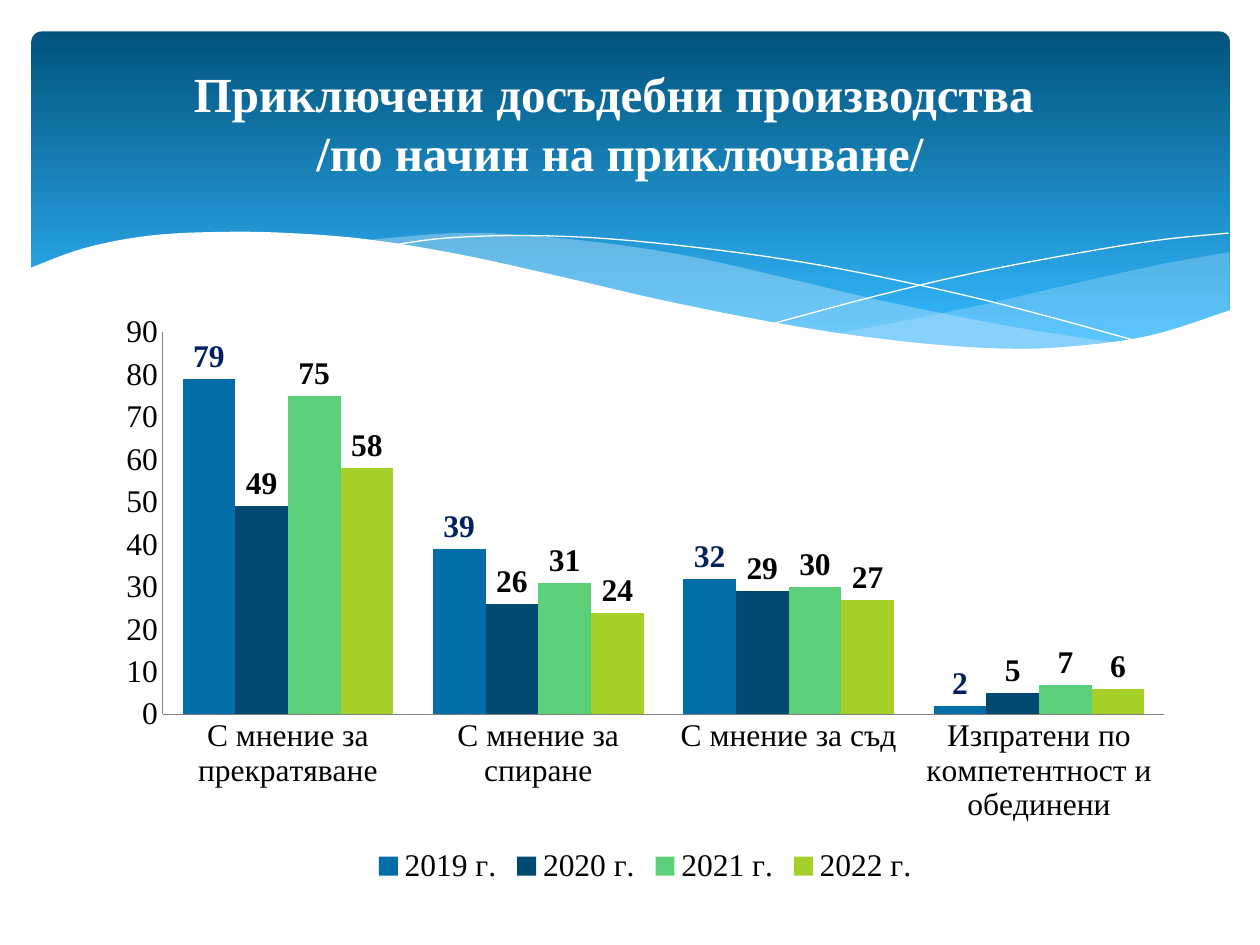
from lxml import etree
from pptx import Presentation
from pptx.chart.data import CategoryChartData
from pptx.dml.color import RGBColor
from pptx.enum.chart import XL_CHART_TYPE, XL_LABEL_POSITION, XL_LEGEND_POSITION, XL_TICK_MARK
from pptx.enum.shapes import MSO_SHAPE
from pptx.enum.text import MSO_ANCHOR, PP_ALIGN
from pptx.oxml.ns import qn
from pptx.util import Pt

COLUMNS = XL_CHART_TYPE.COLUMN_CLUSTERED
OUTSIDE = XL_LABEL_POSITION.OUTSIDE_END
BOTTOM = XL_LEGEND_POSITION.BOTTOM
NO_TICK = XL_TICK_MARK.NONE
ROUNDED = MSO_SHAPE.ROUNDED_RECTANGLE
MIDDLE = MSO_ANCHOR.MIDDLE
CENTER = PP_ALIGN.CENTER

FONT = "Times New Roman"
COLORS = {
    "white": "FFFFFF", "black": "000000", "navy": "002060", "axis": "808080",
    "top": "01537D", "base": "33B8FE", "swell": "C6E7FC",
}

# Wave outlines in points, measured from the banner's top left corner
RIGHT_TOP = [(684.7, 126), (645, 133.2), (602, 142.6), (543, 156.2), (490.3, 167), (458, 172.8)]
RIGHT_LOW = [(458, 172.8), (499.7, 177.8), (544.3, 181.2), (583.2, 181.4), (622, 177.8),
             (655.2, 170.6), (684.7, 159.8)]
MID_TOP = [(625, 178.6), (563, 169.2), (490.3, 154.8), (435, 141.8), (381.6, 129.6),
           (334, 121.7), (284.4, 116.6), (242, 115.2), (188, 119.5)]
MID_LOW = [(188, 119.5), (242.6, 128.2), (305.3, 141.8), (363.6, 154.8), (414.7, 165.6),
           (471.6, 175), (520.6, 180.7), (563, 182.2), (625, 178.6)]
FALLING = [(204.5, 122.4), (236.2, 118.1), (281.5, 116.6), (334, 118.8), (401, 126),
           (460.8, 135.4), (529.2, 149.8), (580.3, 162.7), (635, 177.8)]
RISING = [(423.4, 167), (482.4, 151.2), (540.7, 137.5), (605.5, 125.3), (647.3, 118.8),
          (684, 115.2)]
FRONT = [(685.4, 159.1), (637.2, 174.2), (584.6, 180.7), (542.2, 180.7), (491.8, 176.4),
         (432.7, 167.8), (363, 154.1), (303.8, 140.4), (244.8, 127.4), (192.2, 118.8),
         (147.6, 115.2), (109.4, 114.5), (67.7, 116.6), (30.2, 123.8), (-1.4, 135.4)]
FLOOR = [(-1.4, 219), (685.4, 219)]

YEARS = [
    ("2019 г.", (79, 39, 32, 2), "016EA7", "navy"),
    ("2020 г.", (49, 26, 29, 5), "004970", "black"),
    ("2021 г.", (75, 31, 30, 7), "5BD078", "black"),
    ("2022 г.", (58, 24, 27, 6), "A5D028", "black"),
]
GROUPS = ["С мнение за прекратяване", "С мнение за спиране", "С мнение за съд",
          "Изпратени по компетентност и обединени"]


def rgb(name):
    return RGBColor.from_string(COLORS.get(name, name))


def style(font, size, color, bold=False):
    font.name, font.size, font.bold = FONT, Pt(size), bold
    font.color.rgb = rgb(color)


def smooth(knots, steps=6):
    """Sample a Catmull-Rom curve through the knots."""
    ends = [knots[0], *knots, knots[-1]]
    curve = [knots[0]]
    for a, b, c, d in zip(ends, ends[1:], ends[2:], ends[3:]):
        for step in range(1, steps + 1):
            t = step / steps
            curve.append(tuple(
                (2 * q + (r - p) * t + (2 * p - 5 * q + 4 * r - s) * t ** 2
                 + (3 * q - p - 3 * r + s) * t ** 3) / 2
                for p, q, r, s in zip(a, b, c, d)))
    return curve


def trace(slide, box, points, closed):
    spots = [(Pt(box[0] + x), Pt(box[1] + y)) for x, y in points]
    pen = slide.shapes.build_freeform(*spots[0])
    pen.add_line_segments(spots[1:], close=closed)
    shape = pen.convert_to_shape()
    shape.shadow.inherit = False
    return shape


def add_wave(slide, box, points, color, alpha=100):
    wave = trace(slide, box, points, True)
    wave.fill.solid()
    wave.fill.fore_color.rgb = rgb(color)
    wave.line.fill.background()
    if alpha < 100:
        tint = wave.fill._xPr.find(".//" + qn("a:srgbClr"))
        etree.SubElement(tint, qn("a:alpha")).set("val", str(alpha * 1000))


def add_banner(slide, box):
    # Gradient panel
    panel = slide.shapes.add_shape(ROUNDED, *map(Pt, box))
    panel.adjustments[0] = 0.03
    panel.shadow.inherit = False
    panel.line.fill.background()
    panel.fill.gradient()
    panel.fill.gradient_angle = 270
    for stop, color, place in zip(panel.fill.gradient_stops, ("top", "base"), (0, 0.9)):
        stop.color.rgb = rgb(color)
        stop.position = place

    # Translucent swells
    add_wave(slide, box, smooth(RIGHT_TOP) + smooth(RIGHT_LOW), "swell", 29)
    add_wave(slide, box, smooth(MID_TOP) + smooth(MID_LOW), "swell", 40)

    # Hairline crests
    for knots in (FALLING, RISING):
        crest = trace(slide, box, smooth(knots), False)
        crest.fill.background()
        crest.line.color.rgb = rgb("white")
        crest.line.width = Pt(0)

    # White front wave
    add_wave(slide, box, smooth(FRONT) + FLOOR, "white")


def add_title(slide, box):
    frame = slide.shapes.add_textbox(*map(Pt, box)).text_frame
    frame.word_wrap = True
    frame.vertical_anchor = MIDDLE
    line = frame.paragraphs[0]
    line.text = "Приключени досъдебни производства \v/по начин на приключване/"
    line.alignment = CENTER
    for run in line.runs:
        style(run.font, 28, "white", True)


def add_bars(slide, box):
    data = CategoryChartData()
    data.categories = GROUPS
    for name, values, _, _ in YEARS:
        data.add_series(name, values)
    chart = slide.shapes.add_chart(COLUMNS, *map(Pt, box), data).chart
    chart.has_title = False
    style(chart.font, 18, "black")

    # Series and their labels
    plot = chart.plots[0]
    plot.gap_width, plot.overlap, plot.vary_by_categories = 75, 0, False
    for series, (_, _, fill, ink) in zip(plot.series, YEARS):
        series.format.fill.solid()
        series.format.fill.fore_color.rgb = rgb(fill)
        labels = series.data_labels
        labels.show_value = True
        labels.position = OUTSIDE
        style(labels.font, 18, ink, True)

    # Axes
    for axis in (chart.category_axis, chart.value_axis):
        axis.has_major_gridlines = False
        axis.major_tick_mark = axis.minor_tick_mark = NO_TICK
        axis.format.line.color.rgb = rgb("axis")
        style(axis.tick_labels.font, 18, "black")
    scale = chart.value_axis
    scale.minimum_scale, scale.maximum_scale, scale.major_unit = 0, 90, 10

    # Legend
    chart.has_legend = True
    chart.legend.position = BOTTOM
    chart.legend.include_in_layout = False
    style(chart.legend.font, 18, "black")


def main():
    deck = Presentation()
    deck.slide_width, deck.slide_height = Pt(720), Pt(540)
    slide = deck.slides.add_slide(deck.slide_layouts[6])
    add_banner(slide, (18, 18, 684.7, 194.4))
    add_title(slide, (76.3, 20.9, 555.8, 98.6))
    add_bars(slide, (59.8, 173.5, 617.8, 334.8))
    deck.save("out.pptx")


if __name__ == "__main__":
    main()
